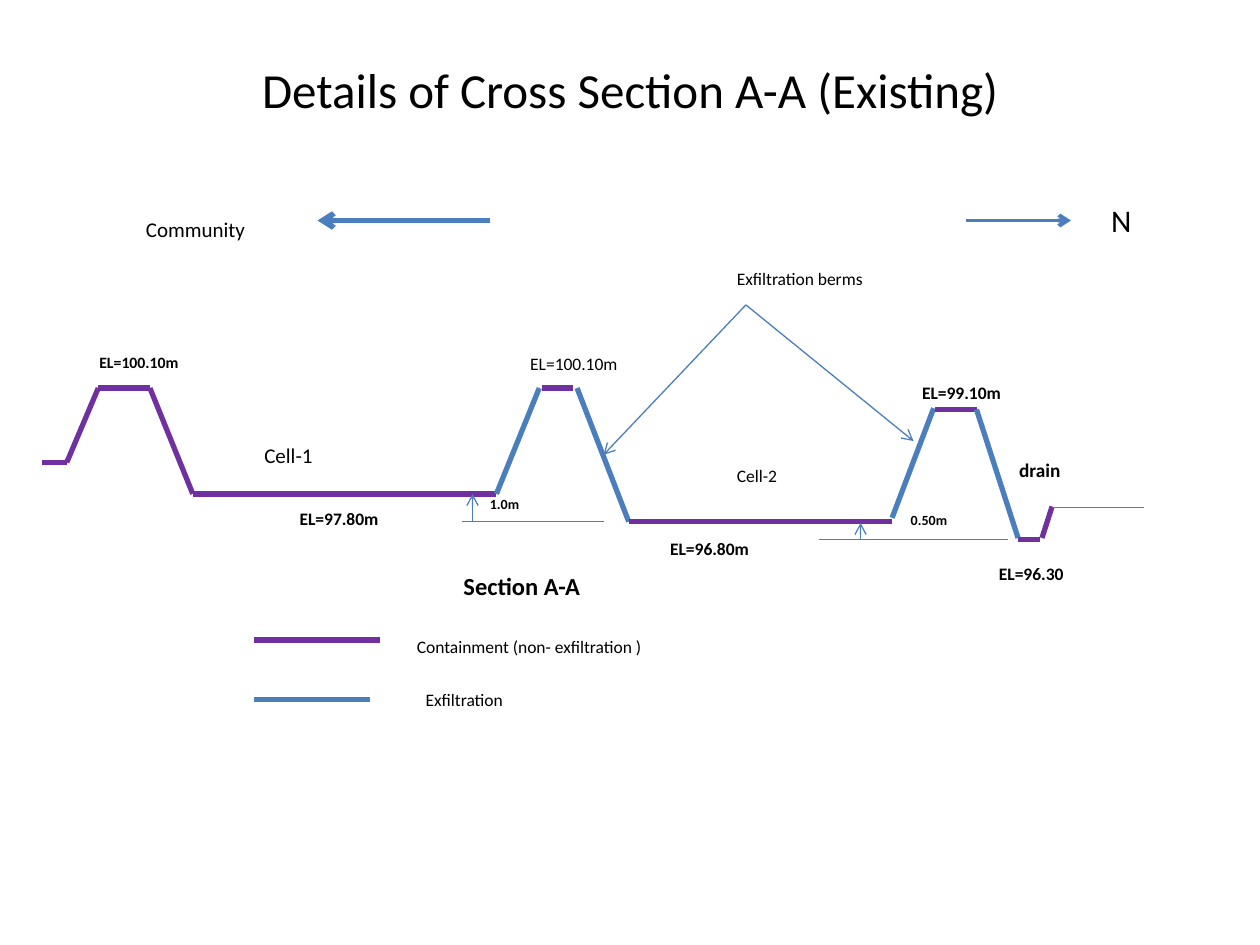
"""Builds the slide with existing cross section A-A of the two cells."""
import pptx
import pptx.util
import pptx.dml.color
import pptx.enum.shapes
import pptx.enum.text
import pptx.oxml
import pptx.oxml.ns

THEME = {
    "font": "Calibri", "ink": "000000", "contain": "7030A0", "exfil": "4B7EBC",
    "thick": 3, "mid": 2.25, "thin": 0.75,
    "title": 28, "north": 18, "section": 14, "large": 12, "drain": 11,
    "label": 10, "small": 9, "tiny": 8,
}
SCALE = 9144

PROFILE = [
    ("contain", [(33, 367), (53, 367), (78, 308), (119, 308), (153, 392), (394, 392)]),
    ("exfil", [(394, 392), (428, 308)]),
    ("contain", [(430, 308), (455, 308)]),
    ("exfil", [(458, 308), (499, 414)]),
    ("contain", [(499, 414), (708, 414)]),
    ("exfil", [(708, 411), (741, 324)]),
    ("contain", [(742, 325), (775, 325)]),
    ("exfil", [(775, 325), (808, 427)]),
    ("contain", [(808, 428), (825, 428)]),
    ("contain", [(827, 427), (835, 402)]),
]
LEGEND = [
    ("contain", [(202, 508), (302, 508)]),
    ("exfil", [(202, 555), (294, 555)]),
]
LEVELS = [
    [(479, 414), (367, 414)],
    [(800, 428), (650, 428)],
    [(835, 403), (908, 403)],
]
ARROWS = [
    ("thin", [(683, 428), (683, 415)]),
    ("thin", [(375, 414), (375, 392)]),
    ("thin", [(592, 242), (479, 361)]),
    ("thin", [(592, 242), (725, 350)]),
    ("mid", [(767, 175), (850, 175)]),
    ("thick", [(389, 175), (252, 175)]),
]

FITTED = [
    ("EL=100.10m", (69, 275, 83, 25), "small", True),
    ("EL=99.10m", (722, 298, 83, 27), "label", True),
    ("EL=100.10m", (411, 275, 91, 27), "label", False),
    ("EL=97.80m", (228, 398, 83, 27), "label", True),
    ("Exfiltration berms", (575, 208, 122, 27), "label", False),
    ("N", (872, 155, 36, 40), "north", False),
    ("drain", (799, 359, 54, 29), "drain", True),
]
WRAPPED = [
    ("EL=96.80m", (522, 422, 125, 27), "label", True),
    ("EL=96.30", (783, 442, 117, 27), "label", True),
    ("1.0m", (379, 388, 57, 24), "tiny", True),
    ("0.50m", (713, 401, 57, 24), "tiny", True),
    ("Cell-1", (200, 346, 86, 30), "large", False),
    ("Cell-2", (575, 364, 83, 27), "label", False),
    ("Community", (106, 167, 110, 30), "large", False),
    ("Containment (non- exfiltration )", (321, 500, 202, 27), "label", False),
    ("Exfiltration", (328, 542, 145, 27), "label", False),
    ("Section A-A", (358, 448, 158, 34), "section", True),
]
TITLE = ("Details of Cross Section A-A (Existing)", (75, 33, 850, 75), "title", False)


def px(n):
    return pptx.util.Emu(n * SCALE)


def color(name):
    return pptx.dml.color.RGBColor.from_string(THEME[name])


def draw(slide, tint, width, points, arrow=False):
    for start, end in zip(points, points[1:]):
        line = slide.shapes.add_connector(
            pptx.enum.shapes.MSO_CONNECTOR.STRAIGHT, *map(px, start + end))
        line.line.color.rgb = color(tint)
        line.line.width = pptx.util.Pt(THEME[width])
        props = line._element.spPr
        if arrow:
            tail = pptx.oxml.parse_xml(
                f'<a:tailEnd {pptx.oxml.ns.nsdecls("a")} type="arrow"/>')
            props.find(pptx.oxml.ns.qn("a:ln")).append(tail)
        props.append(pptx.oxml.parse_xml(
            f'<a:effectLst {pptx.oxml.ns.nsdecls("a")}/>'))


def write(slide, text, place, size, bold, wrap=True):
    box = slide.shapes.add_textbox(*map(px, place))
    frame = box.text_frame
    frame.text = text
    frame.word_wrap = wrap
    frame.auto_size = pptx.enum.text.MSO_AUTO_SIZE.SHAPE_TO_FIT_TEXT
    font = frame.paragraphs[0].runs[0].font
    font.name = THEME["font"]
    font.size = pptx.util.Pt(THEME[size])
    font.bold = bold
    font.color.rgb = color("ink")
    return frame


def main():
    deck = pptx.Presentation()
    deck.slide_width, deck.slide_height = px(1000), px(750)
    slide = deck.slides.add_slide(deck.slide_layouts[6])

    head = write(slide, *TITLE)
    head.auto_size = pptx.enum.text.MSO_AUTO_SIZE.NONE
    head.vertical_anchor = pptx.enum.text.MSO_ANCHOR.MIDDLE
    head.paragraphs[0].alignment = pptx.enum.text.PP_ALIGN.CENTER

    for tint, points in PROFILE + LEGEND:
        draw(slide, tint, "thick", points)
    for points in LEVELS:
        draw(slide, "exfil", "thin", points)
    for width, points in ARROWS:
        draw(slide, "exfil", width, points, arrow=True)
    for label in FITTED:
        write(slide, *label, wrap=False)
    for label in WRAPPED:
        write(slide, *label)

    deck.save("out.pptx")


if __name__ == "__main__":
    main()
